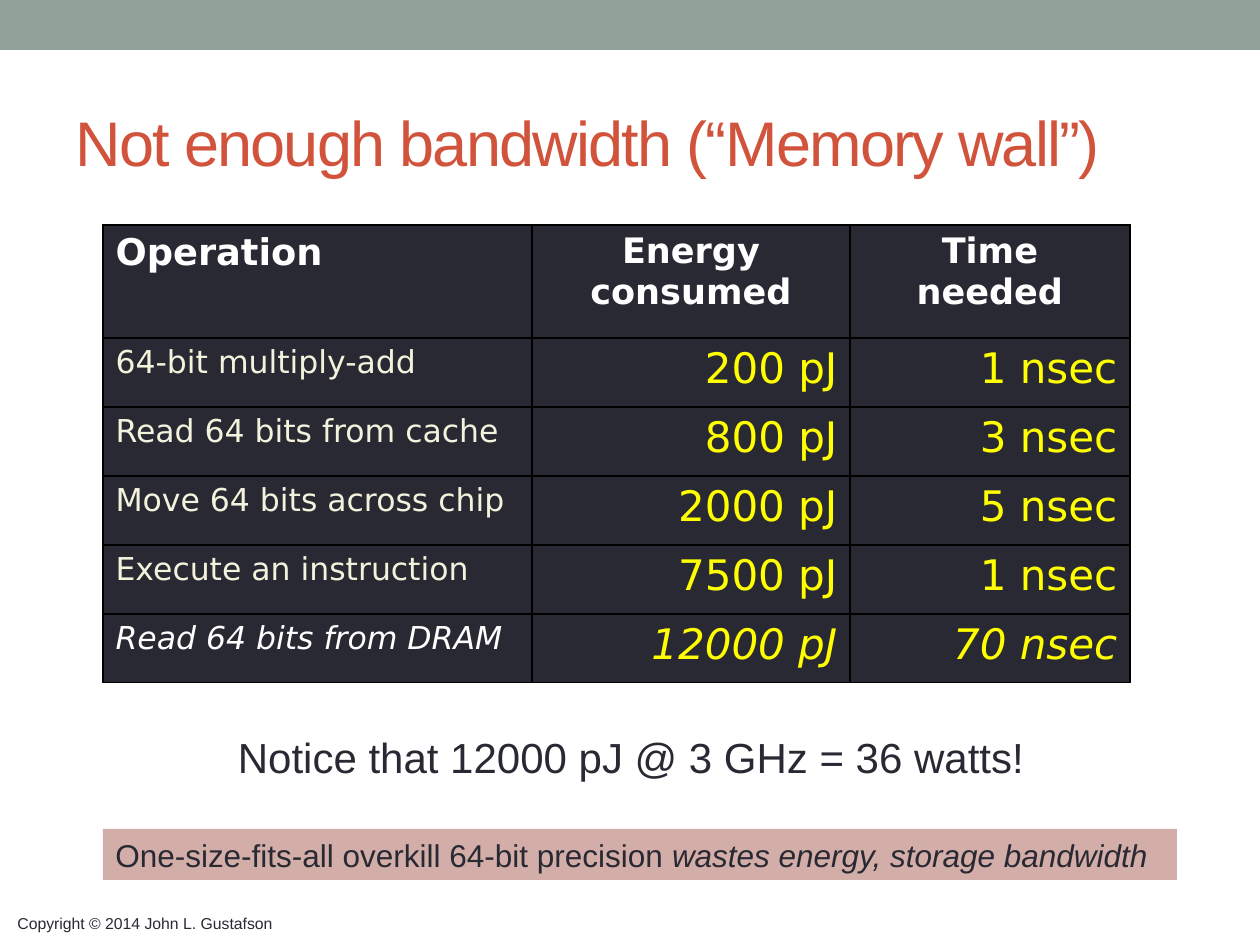
from typing import NamedTuple

from lxml.etree import SubElement
from pptx import Presentation
from pptx.dml.color import RGBColor
from pptx.enum.shapes import MSO_SHAPE
from pptx.enum.text import MSO_ANCHOR, PP_ALIGN
from pptx.oxml.ns import qn
from pptx.util import Pt

PX = 914400 / 126  # EMU in one pixel

DARK, WHITE, BLACK = "292934", "FFFFFF", "000000"
SAGE, RUST, ROSE = "93A299", "D2533C", "D3AEA8"
CREAM, YELLOW = "F3F2DC", "FFFF00"
SANS, TABLE_FONT = "Arial", "DejaVu Sans"


class Box(NamedTuple):
    left: int
    top: int
    width: int
    height: int


class Operation(NamedTuple):
    name: str
    energy: str
    time: str
    color: str = CREAM
    italic: bool = False


HEADINGS = ["Operation", "Energy\nconsumed", "Time\nneeded"]
OPERATIONS = [
    Operation("64-bit multiply-add", "200 pJ", "1 nsec"),
    Operation("Read 64 bits from cache", "800 pJ", "3 nsec"),
    Operation("Move 64 bits across chip", "2000 pJ", "5 nsec"),
    Operation("Execute an instruction", "7500 pJ", "1 nsec"),
    Operation("Read 64 bits from DRAM", "12000 pJ", "70 nsec", WHITE, True),
]
COLUMN_WIDTHS = [429, 318, 280]
HEADER_HEIGHT, ROW_HEIGHT = 113, 69


def px(length: int) -> int:
    return round(length * PX)


def rgb(color: str) -> RGBColor:
    return RGBColor.from_string(color)


def place(box: Box) -> list[int]:
    return [px(length) for length in box]


def add_run(paragraph, text, *, size, color=DARK, font=SANS, bold=False, italic=False):
    run = paragraph.add_run()
    run.text = text
    run.font.name, run.font.size = font, Pt(size)
    run.font.bold, run.font.italic = bold, italic
    run.font.color.rgb = rgb(color)
    return run


def write(frame, text, *, align=PP_ALIGN.LEFT, **style):
    """Write one paragraph for each line of the text and return the last run."""
    for index, line in enumerate(text.split("\n")):
        paragraph = frame.add_paragraph() if index else frame.paragraphs[0]
        paragraph.alignment = align
        run = add_run(paragraph, line, **style)
    return run


def add_rectangle(slide, box: Box, color: str):
    shape = slide.shapes.add_shape(MSO_SHAPE.RECTANGLE, *place(box))
    shape.shadow.inherit = False
    shape.fill.solid()
    shape.fill.fore_color.rgb = rgb(color)
    shape.line.fill.background()
    return shape


def add_text(slide, box: Box, text: str, *, wrap: bool = True, **style):
    frame = slide.shapes.add_textbox(*place(box)).text_frame
    frame.word_wrap = wrap
    write(frame, text, **style)


def add_title(slide, box: Box, text: str):
    title = slide.shapes.title
    title.left, title.top, title.width, title.height = place(box)
    title.text_frame.vertical_anchor = MSO_ANCHOR.MIDDLE
    run = write(title.text_frame, text, size=36, color=RUST)
    run.font._element.set("spc", "-100")


def format_cell(cell, text: str, **style):
    properties = cell._tc.get_or_add_tcPr()
    for side in ("a:lnL", "a:lnR", "a:lnT", "a:lnB"):
        border = SubElement(properties, qn(side), w=str(Pt(1)))
        fill = SubElement(border, qn("a:solidFill"))
        SubElement(fill, qn("a:srgbClr"), val=BLACK)
    cell.fill.solid()
    cell.fill.fore_color.rgb = rgb(DARK)
    write(cell.text_frame, text, font=TABLE_FONT, **style)


def add_cost_table(slide, left: int, top: int):
    height = HEADER_HEIGHT + ROW_HEIGHT * len(OPERATIONS)
    box = Box(left, top, sum(COLUMN_WIDTHS), height)
    table = slide.shapes.add_table(
        len(OPERATIONS) + 1, len(COLUMN_WIDTHS), *place(box)
    ).table
    for column, width in zip(table.columns, COLUMN_WIDTHS):
        column.width = px(width)
    for index, row in enumerate(table.rows):
        row.height = px(ROW_HEIGHT if index else HEADER_HEIGHT)

    for column, heading in enumerate(HEADINGS):
        format_cell(
            table.cell(0, column), heading, bold=True, color=WHITE,
            size=20 if column else 21,
            align=PP_ALIGN.CENTER if column else PP_ALIGN.LEFT,
        )
    for row, operation in enumerate(OPERATIONS, start=1):
        format_cell(table.cell(row, 0), operation.name, size=18,
                    color=operation.color, italic=operation.italic)
        for column, value in enumerate((operation.energy, operation.time), start=1):
            format_cell(table.cell(row, column), value, size=24, color=YELLOW,
                        italic=operation.italic, align=PP_ALIGN.RIGHT)


def main():
    presentation = Presentation()
    presentation.slide_width, presentation.slide_height = px(1260), px(945)
    slide = presentation.slides.add_slide(presentation.slide_layouts[5])

    # Top band, copyright line and title
    add_rectangle(slide, Box(0, 0, 1260, 50), SAGE)
    add_text(slide, Box(5, 908, 284, 32), "Copyright © 2014 John L. Gustafson",
             size=9, wrap=False)
    add_title(slide, Box(63, 73, 1134, 136), "Not enough bandwidth (“Memory wall”)")

    # Energy and time of each operation
    add_cost_table(slide, 103, 225)

    # Remark below the table
    add_text(slide, Box(202, 725, 858, 63), "Notice that 12000 pJ @ 3 GHz = 36 watts!",
             size=24, align=PP_ALIGN.CENTER)

    # Conclusion bar
    bar = add_rectangle(slide, Box(103, 829, 1074, 51), ROSE)
    bar.text_frame.word_wrap = False
    write(bar.text_frame, "One-size-fits-all overkill 64-bit precision ", size=18)
    add_run(bar.text_frame.paragraphs[0], "wastes energy, storage bandwidth",
            size=18, italic=True)

    presentation.save("out.pptx")


if __name__ == "__main__":
    main()
